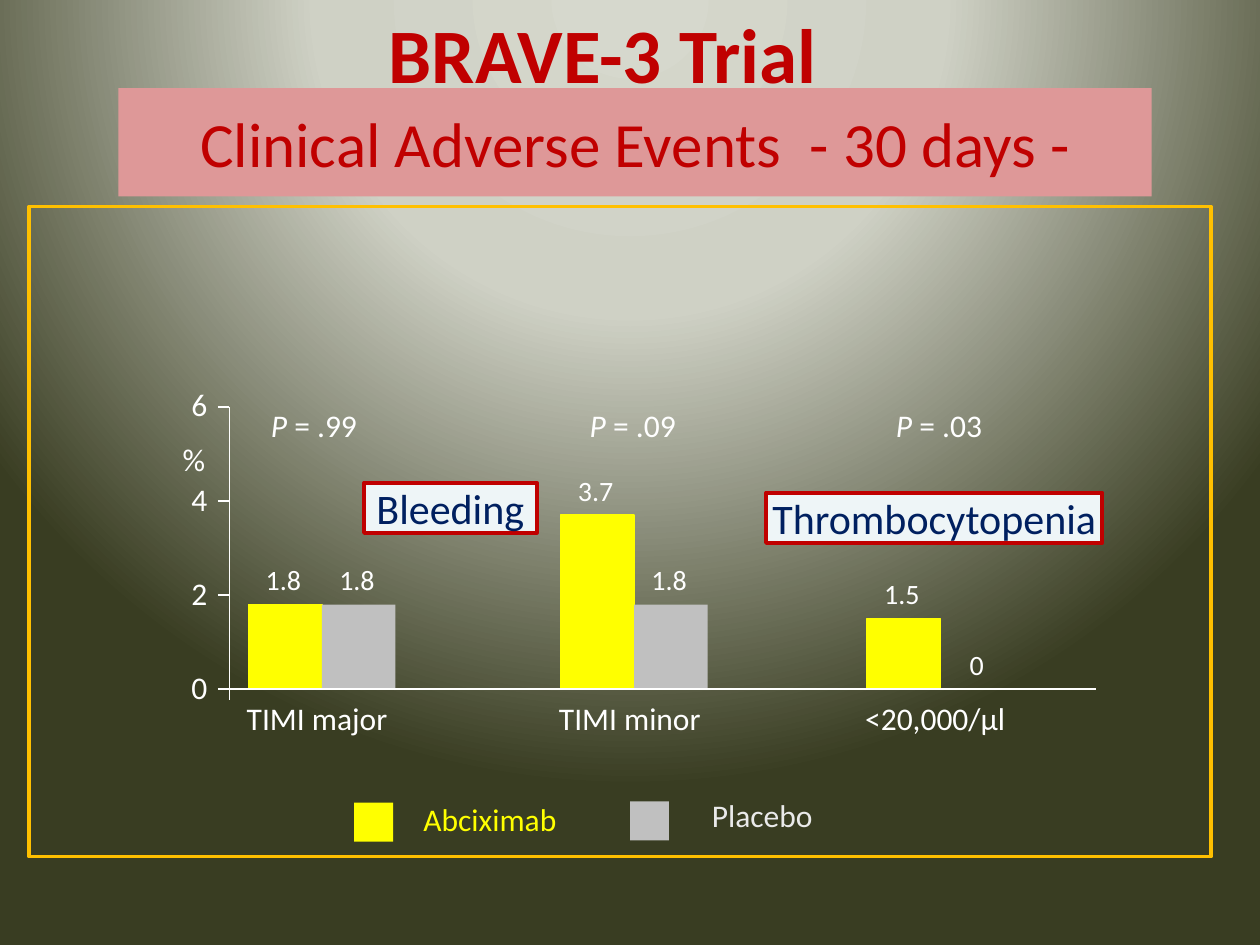
from lxml import etree
from pptx import Presentation
from pptx.dml.color import RGBColor
from pptx.enum.shapes import MSO_CONNECTOR as Connector, MSO_SHAPE as Shape
from pptx.enum.text import MSO_AUTO_SIZE as AutoSize, MSO_ANCHOR as Anchor, PP_ALIGN as Align
from pptx.oxml import parse_xml
from pptx.oxml.ns import nsdecls, qn
from pptx.util import Pt

WHITE, RED, YELLOW, GREY = "FFFFFF", "C00000", "FFFF00", "C0C0C0"
PADDED, TIGHT = (18, 9.36), (0, 0)

AXIS_X, AXIS_END, BASELINE, UNIT = 131, 626.4, 393.8, 26.88
TICK = 6.5
BAR_WIDTH = 42
# category, left of bars, Abciximab, Placebo, P value, left of P value
EVENTS = [
    ("TIMI major", 142, 1.8, 1.8, ".99", 136.8),
    ("TIMI minor", 320.4, 3.7, 1.8, ".09", 319),
    ("<20,000/µl", 495.4, 1.5, 0, ".03", 494),
]


def color(hex_string):
    return RGBColor.from_string(hex_string)


def paint_background(slide):
    stops = [(0, "D6D8CD"), (40000, "CFD1C5"), (100000, "393D22")]
    stop_xml = "".join(
        f'<a:gs pos="{pos}"><a:srgbClr val="{tone}"/></a:gs>' for pos, tone in stops)
    background = parse_xml(
        f'<p:bg {nsdecls("p", "a")}><p:bgPr><a:gradFill rotWithShape="1">'
        f'<a:gsLst>{stop_xml}</a:gsLst><a:path path="circle">'
        '<a:fillToRect l="50000" t="-80000" r="50000" b="180000"/></a:path>'
        '</a:gradFill><a:effectLst/></p:bgPr></p:bg>')
    slide.element.cSld.insert(0, background)


def write(shape, runs, size, tone, inset=TIGHT, align=Align.LEFT, wrap=False, bold=False):
    """Fill a shape with runs given as (text, italic) pairs, or with one plain string."""
    if isinstance(runs, str):
        runs = [(runs, False)]
    side, end = (Pt(value) for value in inset)
    frame = shape.text_frame
    frame_format = dict(margin_left=side, margin_right=side, margin_top=end,
                        margin_bottom=end, word_wrap=wrap, vertical_anchor=Anchor.TOP,
                        auto_size=AutoSize.SHAPE_TO_FIT_TEXT)
    for name, value in frame_format.items():
        setattr(frame, name, value)
    paragraph = frame.paragraphs[0]
    paragraph.alignment = align
    for text, italic in runs:
        run = paragraph.add_run()
        run.text = text
        font_format = dict(name="Calibri", size=Pt(size), bold=bold, italic=italic)
        for name, value in font_format.items():
            setattr(run.font, name, value)
        run.font.color.rgb = color(tone)


def add_label(slide, box, runs, size, tone=WHITE, **text_format):
    label = slide.shapes.add_textbox(*map(Pt, box))
    write(label, runs, size, tone, **text_format)


def add_box(slide, box, fill=None, line=None, line_width=0.75):
    rectangle = slide.shapes.add_shape(Shape.RECTANGLE, *map(Pt, box))
    rectangle.shadow.inherit = False
    if fill:
        rectangle.fill.solid()
        rectangle.fill.fore_color.rgb = color(fill)
    else:
        rectangle.fill.background()
    if line:
        rectangle.line.color.rgb = color(line)
        rectangle.line.width = Pt(line_width)
    else:
        rectangle.line.fill.background()
    return rectangle


def add_line(slide, *ends):
    line = slide.shapes.add_connector(Connector.STRAIGHT, *map(Pt, ends))
    line.line.color.rgb = color(WHITE)
    line.line.width = Pt(0.75)
    etree.SubElement(line.element.spPr, qn("a:effectLst"))


def height_at(value):
    """Vertical place of a percentage on the axis."""
    return BASELINE - value * UNIT


def add_bar(slide, left, value, fill, line=None):
    top = height_at(value)
    if value:
        add_box(slide, (left, top, BAR_WIDTH, BASELINE - top), fill, line)
    width = 22.3 if value else 8.6
    add_label(slide, (left + (BAR_WIDTH - width) / 2, top - 24, width, 19.4), str(value), 16)


def add_axes(slide):
    add_line(slide, AXIS_X, height_at(6), AXIS_X, BASELINE + TICK)
    add_line(slide, AXIS_X, BASELINE, AXIS_END, BASELINE)
    for value in range(0, 7, 2):
        y = height_at(value)
        add_line(slide, AXIS_X - TICK, y, AXIS_X, y)
        add_label(slide, (109.4, y - 12.2, 10, 21.6), str(value), 18)
    add_label(slide, (86.4, 242, 52.6, 39.6), "%", 18, inset=PADDED)


def add_event(slide, category, left, abciximab, placebo, p_value, p_left):
    add_bar(slide, left, abciximab, YELLOW, YELLOW)
    add_bar(slide, left + BAR_WIDTH, placebo, GREY)
    add_label(slide, (left - 1, 399.6, 85.7, 21.6), category, 18)
    add_label(slide, (p_left, 222.5, 93.6, 39.6),
              [("P ", True), (f"= {p_value}", False)], 18, inset=PADDED)


def add_caption(slide, box, text):
    caption = add_box(slide, box, "EEF5F7", RED, 2.25)
    write(caption, text, 24, "002060", align=Align.CENTER, wrap=True)


def add_legend(slide):
    entries = [("Abciximab", YELLOW, YELLOW, (202.3, 458.6), (224, 447.8, 146.9)),
               ("Placebo", GREY, "EAEAEA", (360, 457.9), (388.8, 445.7, 123.1))]
    for name, fill, tone, key, label in entries:
        add_box(slide, (*key, 22.3, 22.3), fill)
        add_label(slide, (*label, 46.8), name, 18, tone, inset=PADDED)


def main():
    deck = Presentation()
    deck.slide_width, deck.slide_height = Pt(720), Pt(540)
    slide = deck.slides.add_slide(deck.slide_layouts[6])
    paint_background(slide)

    subtitle = add_box(slide, (67.7, 50.4, 590.4, 61.9), "DE9898")
    write(subtitle, "Clinical Adverse Events  - 30 days -", 36, RED,
          inset=PADDED, align=Align.CENTER, wrap=True)
    for event in EVENTS:
        add_event(slide, *event)
    add_axes(slide)
    add_caption(slide, (208.1, 275.8, 98.6, 28.8), "Bleeding")
    add_caption(slide, (437.8, 281.5, 192.2, 28.8), "Thrombocytopenia")
    add_legend(slide)
    add_box(slide, (16.6, 118.1, 675.4, 371.5), line="FFC000", line_width=2)
    add_label(slide, (202.3, -5.8, 284.4, 95.8), "BRAVE-3 Trial", 44, RED,
              inset=PADDED, align=Align.CENTER, bold=True)
    deck.save("out.pptx")


if __name__ == "__main__":
    main()
